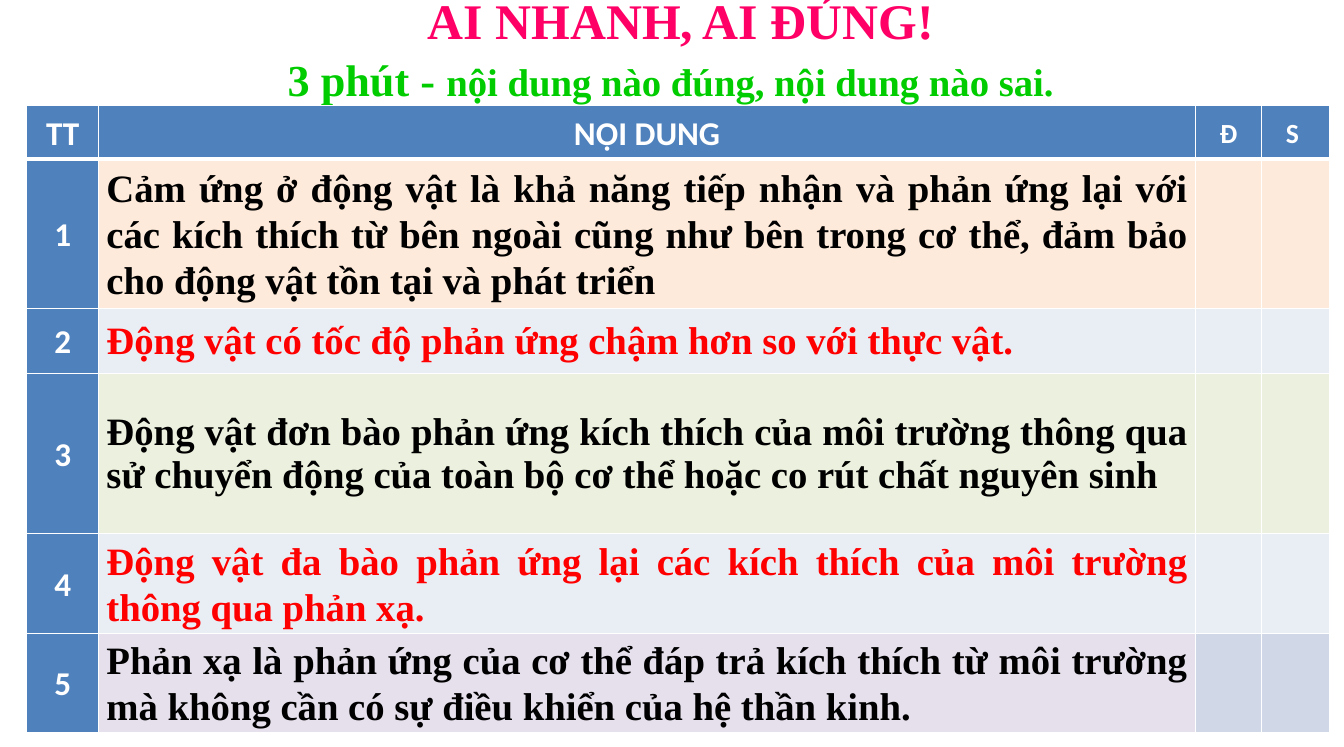
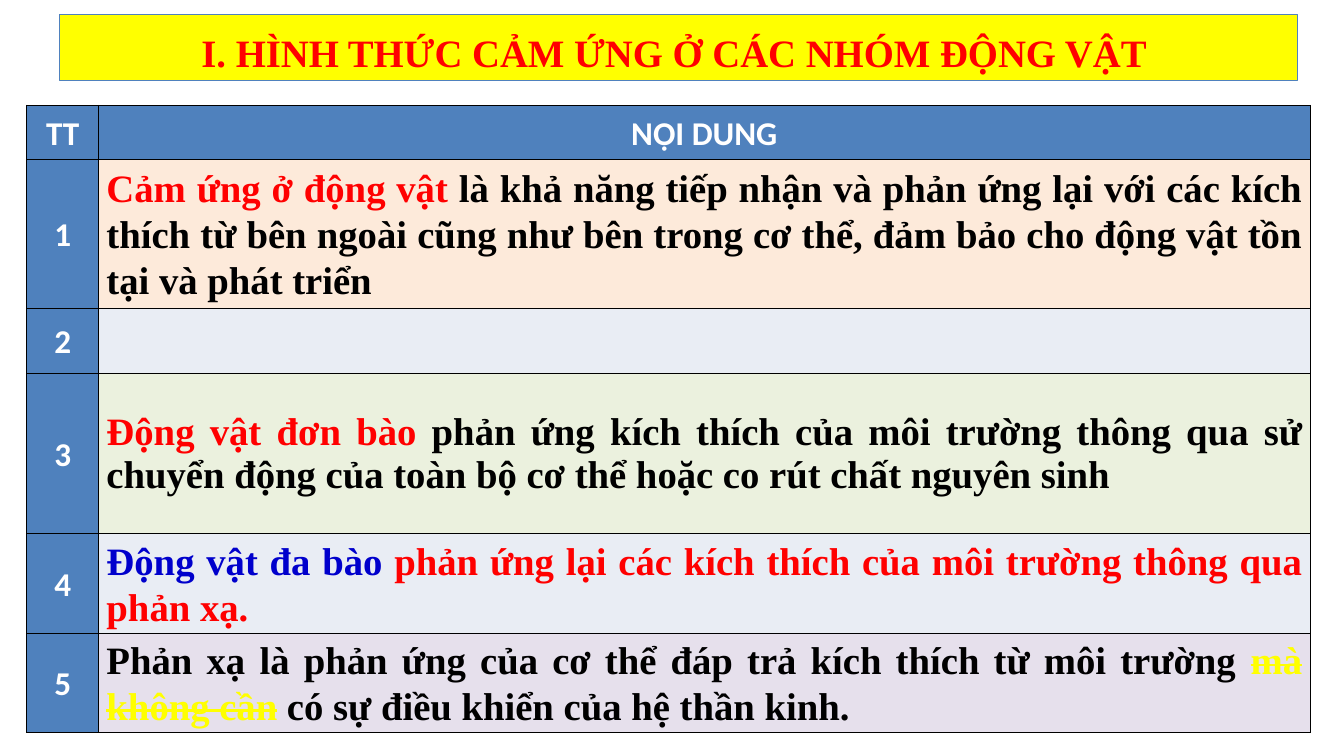
"""Build two quiz slides about responses in animals."""
from lxml import etree
from pptx import Presentation
from pptx.dml.color import RGBColor
from pptx.enum import shapes, text
from pptx.oxml import ns
from pptx.util import Inches, Pt

WHITE = RGBColor(0xFF, 0xFF, 0xFF)
BLACK = RGBColor(0x00, 0x00, 0x00)
RED = RGBColor(0xFF, 0x00, 0x00)
PINK = RGBColor(0xFF, 0x00, 0x66)
GREEN = RGBColor(0x00, 0xCC, 0x00)
NAVY = RGBColor(0x00, 0x00, 0xCC)
YELLOW = RGBColor(0xFF, 0xFF, 0x00)
BLUE = RGBColor(0x4F, 0x81, 0xBD)
PEACH = RGBColor(0xFD, 0xEA, 0xDA)
PALE_BLUE = RGBColor(0xE9, 0xED, 0xF4)
PALE_GREEN = RGBColor(0xEB, 0xF1, 0xDE)
LILAC = RGBColor(0xE6, 0xE0, 0xEC)
GREY_BLUE = RGBColor(0xD0, 0xD8, 0xE8)

SERIF, SANS = "Times New Roman", "Calibri"
CENTER, JUSTIFY = text.PP_ALIGN.CENTER, text.PP_ALIGN.JUSTIFY
ROW_HEIGHTS = [0.54, 1.45, 0.65, 1.61, 0.96, 0.96]
ROW_FILLS = [PEACH, PALE_BLUE, PALE_GREEN, PALE_BLUE, LILAC]
MARK_FILLS = ROW_FILLS[:-1] + [GREY_BLUE]
ROW_SPACING = [1.07, 1.0, 1.0, 1.07, 1.07]

QUIZ = [
    [("Cảm ứng ở động vật là khả năng tiếp nhận và phản ứng lại với các kích thích "
      "từ bên ngoài cũng như bên trong cơ thể, đảm bảo cho động vật tồn tại và phát triển", BLACK)],
    [("Động vật có tốc độ phản ứng chậm hơn so với thực vật.", RED)],
    [("Động vật đơn bào phản ứng kích thích của môi trường thông qua sử chuyển động "
      "của toàn bộ cơ thể hoặc co rút chất nguyên sinh", BLACK)],
    [("Động vật đa bào phản ứng lại các kích thích của môi trường thông qua phản xạ. ", RED)],
    [("Phản xạ là phản ứng của cơ thể đáp trả kích thích từ môi trường mà không cần "
      "có sự điều khiển của hệ thần kinh.", BLACK)],
]
ANSWERS = [
    [("Cảm ứng ở động vật ", RED),
     ("là khả năng tiếp nhận và phản ứng lại với các kích thích từ bên ngoài cũng như "
      "bên trong cơ thể, đảm bảo cho động vật tồn tại và phát triển", BLACK)],
    [],
    [("Động vật đơn bào ", RED),
     ("phản ứng kích thích của môi trường thông qua sử chuyển động của toàn bộ cơ thể "
      "hoặc co rút chất nguyên sinh", BLACK)],
    [("Động vật đa bào ", NAVY),
     ("phản ứng lại các kích thích của môi trường thông qua phản xạ. ", RED)],
    [("Phản xạ là phản ứng của cơ thể đáp trả kích thích từ môi trường ", BLACK),
     ("mà không cần", YELLOW),
     (" có sự điều khiển của hệ thần kinh.", BLACK)],
]


def add_run(p, words, size, color, font=SERIF):
    """Add a bold run to a paragraph."""
    r = p.add_run()
    r.text = words
    r.font.size, r.font.name, r.font.bold = Pt(size), font, True
    r.font.color.rgb = color
    return r


def add_heading(s, box, runs, spacing=1.0):
    """Add a centred line of text."""
    tf = s.shapes.add_textbox(*map(Inches, box)).text_frame
    tf.word_wrap = True
    p = tf.paragraphs[0]
    p.alignment, p.line_spacing = CENTER, spacing
    for words, size, color in runs:
        add_run(p, words, size, color)


def add_banner(s, box, words):
    """Add the yellow title bar."""
    sp = s.shapes.add_shape(shapes.MSO_SHAPE.RECTANGLE, *map(Inches, box))
    sp.shadow.inherit = False
    sp.fill.solid()
    sp.fill.fore_color.rgb = YELLOW
    sp.line.color.rgb, sp.line.width = BLUE, Pt(0.75)
    p = sp.text_frame.paragraphs[0]
    p.alignment, p.line_spacing = CENTER, 1.18
    add_run(p, words, 28, RED)


def set_borders(cell, color, top=1, bottom=1):
    """Draw the four cell borders, with widths in points."""
    tc_pr = cell._tc.get_or_add_tcPr()
    sides = [("lnL", 1), ("lnR", 1), ("lnT", top), ("lnB", bottom)]
    for i, (tag, width) in enumerate(sides):
        ln = etree.Element(ns.qn(f"a:{tag}"), w=str(Pt(width)))
        fill = etree.SubElement(ln, ns.qn("a:solidFill"))
        etree.SubElement(fill, ns.qn("a:srgbClr"), val=str(color))
        tc_pr.insert(i, ln)


def style_cell(cell, fill):
    """Set fill, margins and anchor of a cell and return its paragraph."""
    cell.fill.solid()
    cell.fill.fore_color.rgb = fill
    cell.margin_left = cell.margin_right = Inches(0.08)
    cell.margin_top = cell.margin_bottom = 0
    cell.vertical_anchor = text.MSO_ANCHOR.MIDDLE
    return cell.text_frame.paragraphs[0]


def fill_label(cell, words, size=24):
    """Fill a blue heading cell."""
    p = style_cell(cell, BLUE)
    p.alignment, p.line_spacing, p.space_after = CENTER, 1.07, Pt(8)
    add_run(p, words, size, WHITE, SANS)


def fill_statement(cell, runs, fill, spacing):
    """Fill a statement cell, striking out the yellow words."""
    p = style_cell(cell, fill)
    p.alignment, p.line_spacing = JUSTIFY, spacing
    for words, color in runs:
        r = add_run(p, words, 28, color)
        if color == YELLOW:
            r._r.get_or_add_rPr().set("strike", "sngStrike")


def add_statements(s, widths, headers, statements, border, rule):
    """Add the numbered table; rule is the line width under its header."""
    tbl = s.shapes.add_table(len(ROW_HEIGHTS), len(widths), Inches(0.27), Inches(1.06),
                             Inches(sum(widths)), Inches(sum(ROW_HEIGHTS))).table
    tbl.horz_banding = False
    for col, width in zip(tbl.columns, widths):
        col.width = Inches(width)
    for row, height in zip(tbl.rows, ROW_HEIGHTS):
        row.height = Inches(height)
    for c, words in enumerate(headers):
        fill_label(tbl.cell(0, c), words, 24 if c < 2 else 20)
    for i, runs in enumerate(statements):
        fill_label(tbl.cell(i + 1, 0), str(i + 1))
        fill_statement(tbl.cell(i + 1, 1), runs, ROW_FILLS[i], ROW_SPACING[i])
        for c in range(2, len(widths)):
            style_cell(tbl.cell(i + 1, c), MARK_FILLS[i])
    for i, row in enumerate(tbl.rows):
        for cell in row.cells:
            set_borders(cell, border, rule if i == 1 else 1, rule if i == 0 else 1)


def main():
    """Build and save the presentation."""
    prs = Presentation()
    prs.slide_width, prs.slide_height = Inches(13.5), Inches(7.5)
    blank = prs.slide_layouts[6]

    s = prs.slides.add_slide(blank)
    add_heading(s, (1.27, -0.08, 11.14, 0.75), [("AI NHANH, AI ĐÚNG!", 36, PINK)], 0.9)
    add_heading(s, (0.54, 0.48, 12.39, 0.64),
                [("3 phút - ", 32, GREEN), ("nội dung nào đúng, nội dung nào sai.", 28, GREEN)])
    add_statements(s, [0.72, 11.02, 0.66, 0.69], ["TT", "NỘI DUNG", "Đ", "S "], QUIZ, WHITE, 3)

    s = prs.slides.add_slide(blank)
    add_statements(s, [0.72, 12.17], ["TT", "NỘI DUNG"], ANSWERS, BLACK, 1)
    add_banner(s, (0.6, 0.15, 12.43, 0.66), "I. HÌNH THỨC CẢM ỨNG Ở CÁC NHÓM ĐỘNG VẬT ")

    prs.save("out.pptx")


if __name__ == "__main__":
    main()
